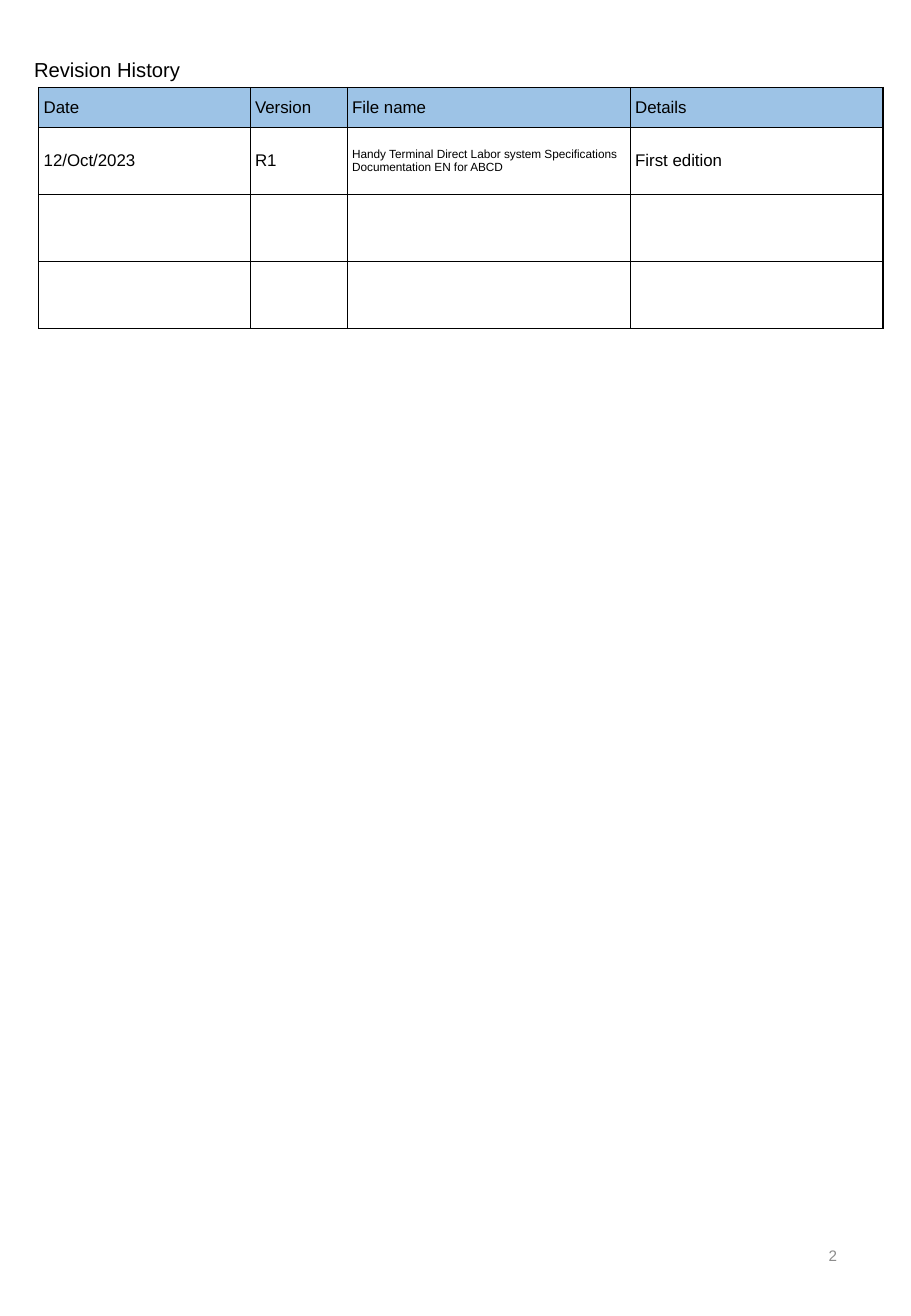
from lxml.etree import SubElement
from pptx import Presentation
from pptx.dml.color import RGBColor
from pptx.enum.text import MSO_ANCHOR as Anchor, MSO_AUTO_SIZE as AutoSize, PP_ALIGN as Align
from pptx.oxml.ns import qn
from pptx.util import Inches, Pt

COLORS = {"text": "000000", "header": "9DC3E6", "border": "000000", "number": "8C8C8C"}
FONT = "Arial"
COLUMN_WIDTHS = [1.74, 0.8, 2.33, 2.08]
ROW_HEIGHTS = [0.33, 0.55, 0.55, 0.55]
REVISIONS = [
    ["Date", "Version", "File name", "Details"],
    ["12/Oct/2023", "R1",
     "Handy Terminal Direct Labor system Specifications Documentation EN for ABCD",
     "First edition"],
    [""] * 4,
    [""] * 4,
]
BODY_SIZE, FILE_NAME_SIZE = 10, 7


def format_paragraph(para, size, color="text", align=Align.LEFT):
    para.alignment = align
    para.font.name = FONT
    para.font.size = Pt(size)
    para.font.color.rgb = RGBColor.from_string(COLORS[color])


def place(shape, left, top, width, height):
    shape.left, shape.top = Inches(left), Inches(top)
    shape.width, shape.height = Inches(width), Inches(height)


def add_title(page, text):
    title = page.shapes.title
    place(title, 0.12, 0.42, 1.56, 0.3)
    frame = title.text_frame
    frame.text = text
    frame.word_wrap = True
    frame.auto_size = AutoSize.NONE
    frame.vertical_anchor = Anchor.MIDDLE
    para = frame.paragraphs[0]
    format_paragraph(para, 12)
    para._p.get_or_add_pPr().set("indent", str(Inches(0.06)))


def add_borders(cell):
    properties = cell._tc.get_or_add_tcPr()
    for side in ("lnL", "lnR", "lnT", "lnB"):
        line = SubElement(properties, qn(f"a:{side}"), w=str(Pt(0.75)))
        fill = SubElement(line, qn("a:solidFill"))
        SubElement(fill, qn("a:srgbClr"), val=COLORS["border"])


def format_cell(cell, text, size, is_header):
    cell.text = text
    cell.vertical_anchor = Anchor.MIDDLE
    cell.margin_left, cell.margin_right = Inches(0.04), Inches(0.1)
    cell.margin_top = cell.margin_bottom = Inches(0.05)
    format_paragraph(cell.text_frame.paragraphs[0], size)
    add_borders(cell)
    if is_header:
        cell.fill.solid()
        cell.fill.fore_color.rgb = RGBColor.from_string(COLORS["header"])
    else:
        cell.fill.background()


def add_revision_table(page):
    frame = page.shapes.add_table(
        len(ROW_HEIGHTS), len(COLUMN_WIDTHS), Inches(0.32), Inches(0.72),
        Inches(sum(COLUMN_WIDTHS)), Inches(sum(ROW_HEIGHTS)))
    table = frame.table
    table.first_row = table.horz_banding = False
    for column, width in zip(table.columns, COLUMN_WIDTHS):
        column.width = Inches(width)
    file_column = REVISIONS[0].index("File name")
    for row_index, (row, height) in enumerate(zip(table.rows, ROW_HEIGHTS)):
        row.height = Inches(height)
        is_header = row_index == 0
        for column_index, text in enumerate(REVISIONS[row_index]):
            is_file_name = column_index == file_column and not is_header
            size = FILE_NAME_SIZE if is_file_name else BODY_SIZE
            format_cell(row.cells[column_index], text, size, is_header)


def add_page_number(page, number):
    box = page.shapes.add_textbox(Inches(5.3), Inches(10.04), Inches(1.69), Inches(0.58))
    frame = box.text_frame
    frame.text = number
    frame.word_wrap = True
    frame.vertical_anchor = Anchor.MIDDLE
    format_paragraph(frame.paragraphs[0], 9, "number", Align.RIGHT)


def main():
    deck = Presentation()
    deck.slide_width, deck.slide_height = Inches(7.5), Inches(10.83)
    title_only = deck.slide_layouts[5]
    page = deck.slides.add_slide(title_only)
    add_title(page, "Revision History")
    add_revision_table(page)
    add_page_number(page, "2")
    deck.save("out.pptx")


if __name__ == "__main__":
    main()
